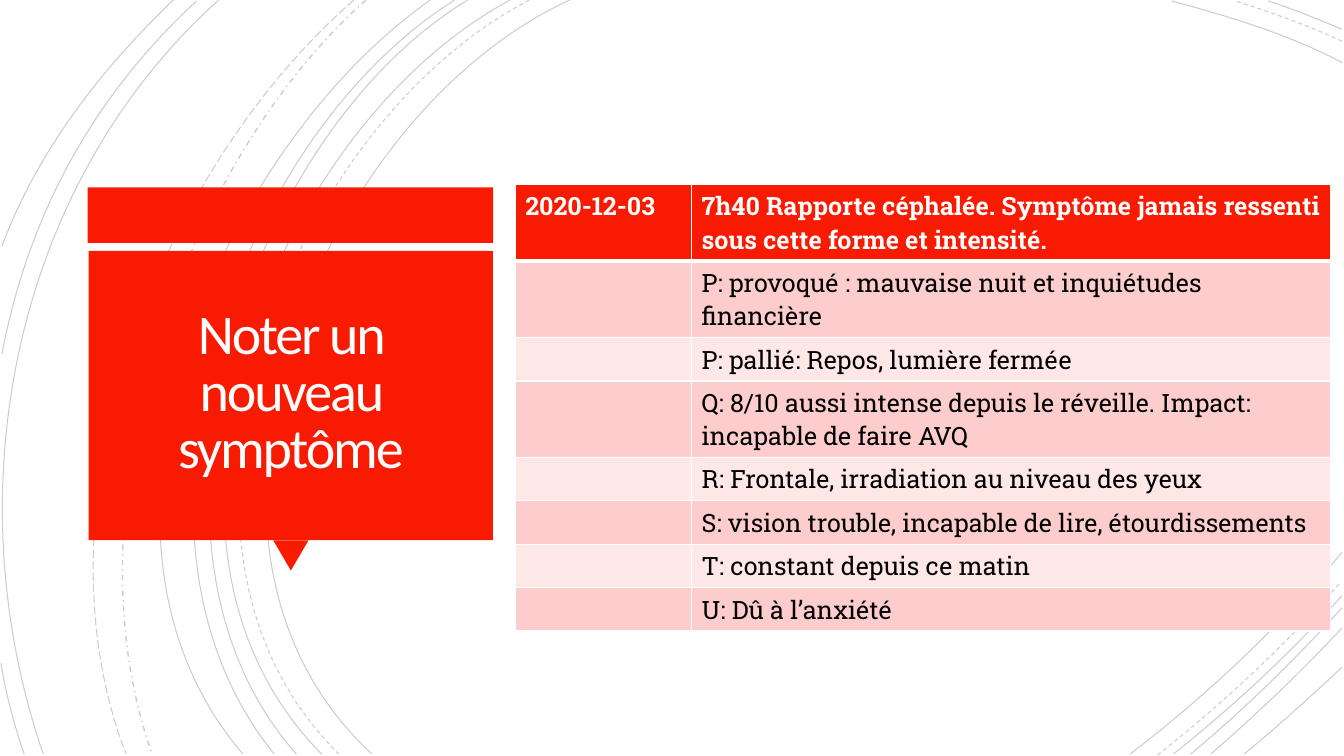
from lxml.etree import SubElement
from pptx import Presentation
from pptx.dml.color import RGBColor
from pptx.enum.dml import MSO_LINE
from pptx.enum.shapes import MSO_SHAPE
from pptx.enum.text import MSO_ANCHOR, PP_ALIGN
from pptx.oxml.ns import qn
from pptx.util import Inches, Pt

RED = RGBColor(0xF8, 0x1B, 0x02)
ROSE = RGBColor(0xFC, 0xCD, 0xCC)
BLUSH = RGBColor(0xFE, 0xE8, 0xE7)
WHITE = RGBColor(0xFF, 0xFF, 0xFF)
OFF_WHITE = RGBColor(0xFF, 0xFE, 0xFF)
BLACK = RGBColor(0, 0, 0)

TITLE = "Noter un nouveau symptôme"
NOTES = [
    ("2020-12-03", "7h40 Rapporte céphalée. Symptôme jamais ressenti sous cette forme et intensité."),
    ("", "P: provoqué : mauvaise nuit et inquiétudes financière"),
    ("", "P: pallié: Repos, lumière fermée"),
    ("", "Q: 8/10 aussi intense depuis le réveille. Impact: incapable de faire AVQ"),
    ("", "R: Frontale, irradiation au niveau des yeux"),
    ("", "S: vision trouble, incapable de lire, étourdissements"),
    ("", "T: constant depuis ce matin"),
    ("", "U: Dû à l’anxiété"),
]
COLUMN_WIDTHS = (1.75, 6.34)
LINE_COUNTS = (2, 2, 1, 2, 1, 1, 1, 1)
LINE_HEIGHT = 0.33
ROW_PADDING = 0.1

SOLID_ARCS = [
    [(5.65, 0), (3.15, 1.15), (1.43, 5.4), (3.69, 7.48)],
    [(13.31, 0.62), (12.78, 0.34), (12.18, 0.16), (11.62, 0.01)],
    [(11.21, 7.48), (11.97, 6.9), (12.69, 6.22), (13.31, 5.48)],
    [(5.06, 0), (2.7, 1.27), (1.1, 5.37), (3.19, 7.48)],
    [(13.31, 0.29), (13.07, 0.19), (12.83, 0.09), (12.58, 0.01)],
    [(11.64, 7.48), (12.23, 7.01), (12.8, 6.48), (13.31, 5.91)],
    [(4.64, 0), (2.44, 1.33), (1.1, 5.41), (2.94, 7.48)],
    [(11.81, 7.48), (12.34, 7.04), (12.84, 6.55), (13.31, 6.03)],
    [(4.51, 0), (2.31, 1.38), (0.97, 5.33), (2.72, 7.48)],
    [(12.01, 7.48), (12.46, 7.09), (12.9, 6.67), (13.31, 6.23)],
    [(4.27, 0), (2.17, 1.47), (0.53, 5.29), (2.41, 7.48)],
    [(12.34, 7.48), (12.67, 7.21), (12.99, 6.92), (13.31, 6.62)],
    [(2.17, 0), (0.11, 1.85), (-0.46, 4.9), (0.43, 7.48)],
    [(1.95, 0.01), (0.92, 0.96), (0.28, 2.14), (0.02, 3.51)],
    [(0.01, 6.58), (0.06, 6.89), (0.14, 7.19), (0.24, 7.48)],
    [(1.72, 0), (1, 0.69), (0.37, 1.5), (0.02, 2.44)],
]
DASHED_ARCS = [
    [(5.25, 0), (2.85, 1.25), (1.23, 5.37), (3.36, 7.48)],
    [(13.31, 0.41), (12.97, 0.25), (12.6, 0.12), (12.25, 0.01)],
    [(11.48, 7.49), (12.13, 6.98), (12.75, 6.4), (13.3, 5.77)],
]
DASH_DOT_ARCS = [[(3.63, 0), (1.76, 1.66), (0.65, 5.09), (1.51, 7.48)]]
LONG_DASH_ARCS = [[(3.51, 0), (1.57, 1.69), (0.29, 4.99), (1.25, 7.48)]]
ARC_GROUPS = [
    (SOLID_ARCS, MSO_LINE.SOLID, 0.75),
    (DASHED_ARCS, MSO_LINE.DASH, 0.75),
    (DASH_DOT_ARCS, MSO_LINE.DASH_DOT, 1),
    (LONG_DASH_ARCS, MSO_LINE.LONG_DASH, 0.75),
]
ARC_OPACITY = 20

PANELS = [
    (MSO_SHAPE.RECTANGLE, (0.87, 1.86, 4.02, 0.55), 0),
    (MSO_SHAPE.ISOSCELES_TRIANGLE, (2.71, 5.36, 0.35, 0.3), 180),
    (MSO_SHAPE.RECTANGLE, (0.88, 2.49, 4.01, 2.87), 0),
]


def bend(curve):
    segments = list(curve._element.iter(qn("a:lnTo")))
    outline = segments[0].getparent()
    bezier = SubElement(outline, qn("a:cubicBezTo"))
    for segment in segments:
        bezier.append(segment[0])
        outline.remove(segment)


def draw_arc(slide, arc, dash, width):
    start, *controls = [tuple(map(Inches, point)) for point in arc]
    builder = slide.shapes.build_freeform(*start)
    builder.add_line_segments(controls, close=False)
    curve = builder.convert_to_shape()
    bend(curve)
    curve.shadow.inherit = False
    curve.fill.background()
    curve.line.color.rgb = BLACK
    curve.line.width = Pt(width)
    curve.line.dash_style = dash
    color = next(curve._element.spPr.find(qn("a:ln")).iter(qn("a:srgbClr")))
    SubElement(color, qn("a:alpha"), val=str(ARC_OPACITY * 1000))


def draw_panel(slide, kind, box, rotation):
    panel = slide.shapes.add_shape(kind, *map(Inches, box))
    panel.shadow.inherit = False
    panel.fill.solid()
    panel.fill.fore_color.rgb = RED
    panel.line.fill.background()
    panel.rotation = rotation


def write(frame, text, *, font, size, color, bold=False, align=PP_ALIGN.LEFT, leading=None, spacing=None):
    paragraph = frame.paragraphs[0]
    paragraph.alignment = align
    paragraph.line_spacing = leading
    run = paragraph.add_run()
    run.text = text
    run.font.name = font
    run.font.size = Pt(size)
    run.font.bold = bold
    run.font.color.rgb = color
    if spacing is not None:
        run.font._element.set("spc", str(int(spacing * 100)))


def set_borders(cell, bottom):
    properties = cell._tc.get_or_add_tcPr()
    for side, width in (("L", 1), ("R", 1), ("T", 1), ("B", bottom)):
        edge = SubElement(properties, qn(f"a:ln{side}"), w=str(Pt(width)))
        paint = SubElement(edge, qn("a:solidFill"))
        SubElement(paint, qn("a:srgbClr"), val=str(WHITE))


def draw_title(slide):
    title = slide.shapes.add_textbox(*map(Inches, (0.97, 2.57, 3.83, 2.69)))
    frame = title.text_frame
    frame.word_wrap = True
    frame.vertical_anchor = MSO_ANCHOR.MIDDLE
    frame.margin_left = frame.margin_right = Inches(0.25)
    frame.margin_top = frame.margin_bottom = Inches(0.25)
    write(frame, TITLE, font="Calibri", size=40, color=OFF_WHITE,
          align=PP_ALIGN.CENTER, leading=0.85, spacing=-1.5)


def draw_notes(slide):
    heights = [lines * LINE_HEIGHT + ROW_PADDING for lines in LINE_COUNTS]
    box = (5.11, 1.83, sum(COLUMN_WIDTHS), sum(heights))
    table = slide.shapes.add_table(len(NOTES), len(COLUMN_WIDTHS), *map(Inches, box)).table
    for column, width in zip(table.columns, COLUMN_WIDTHS):
        column.width = Inches(width)
    for index, entry in enumerate(NOTES):
        header = index == 0
        table.rows[index].height = Inches(heights[index])
        for position, text in enumerate(entry):
            cell = table.cell(index, position)
            set_borders(cell, bottom=3 if header else 1)
            cell.fill.solid()
            cell.fill.fore_color.rgb = RED if header else (BLUSH, ROSE)[index % 2]
            if text:
                write(cell.text_frame, text, font="Roboto Slab", size=18,
                      color=WHITE if header else BLACK, bold=header)


def main():
    deck = Presentation()
    deck.slide_width, deck.slide_height = Inches(13.33), Inches(7.5)
    slide = deck.slides.add_slide(deck.slide_layouts[6])
    slide.background.fill.solid()
    slide.background.fill.fore_color.rgb = WHITE
    for arcs, dash, width in ARC_GROUPS:
        for arc in arcs:
            draw_arc(slide, arc, dash, width)
    for panel in PANELS:
        draw_panel(slide, *panel)
    draw_title(slide)
    draw_notes(slide)
    deck.save("out.pptx")


if __name__ == "__main__":
    main()
